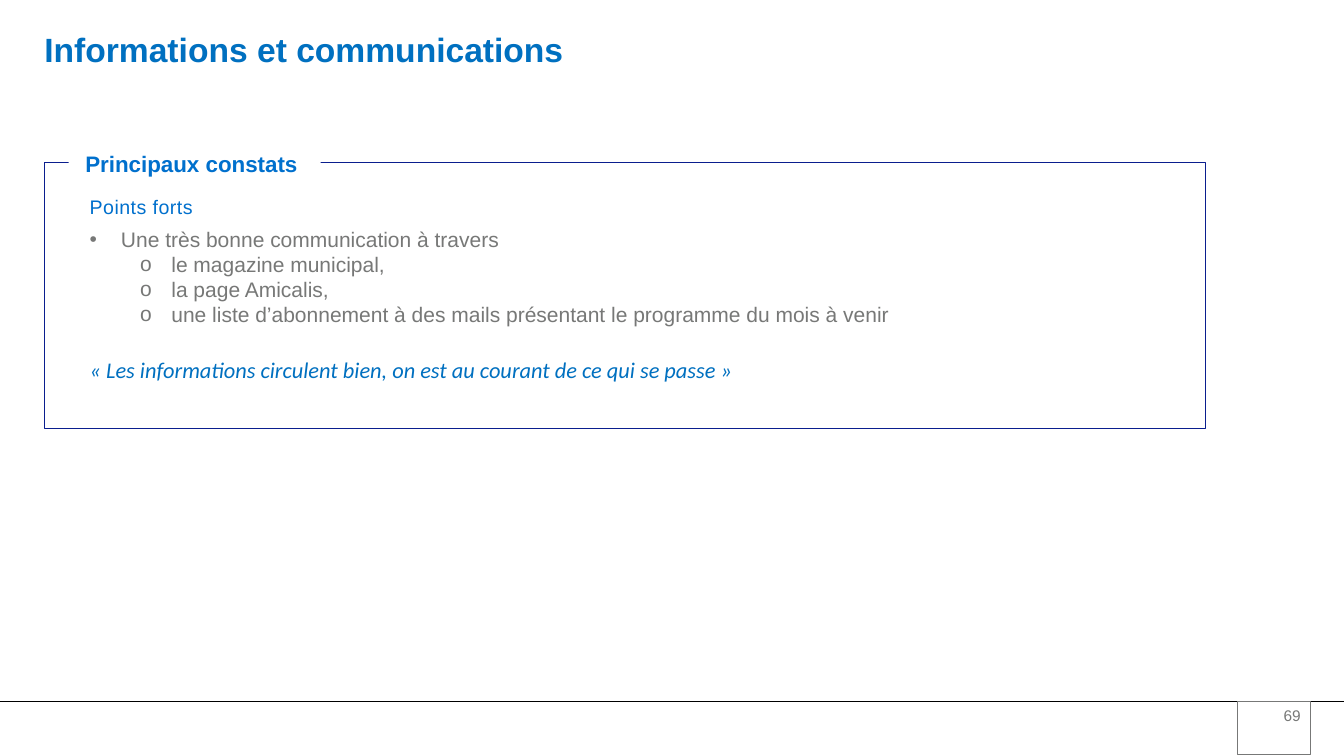
from dataclasses import dataclass
from typing import Optional

import pptx
import pptx.dml.color
import pptx.enum.shapes
import pptx.enum.text
import pptx.oxml.ns
import pptx.util
from lxml import etree

Inches = pptx.util.Inches
Pt = pptx.util.Pt
Align = pptx.enum.text.PP_ALIGN
Anchor = pptx.enum.text.MSO_ANCHOR
qn = pptx.oxml.ns.qn


@dataclass(frozen=True)
class Theme:
    font: str = "Arial"
    quote_font: str = "Calibri"
    blue: str = "0070C0"
    label_blue: str = "0070CD"
    navy: str = "0A1E8E"
    grey: str = "777877"
    white: str = "FFFFFF"
    black: str = "000000"
    title_size: float = 24
    label_size: float = 16
    heading_size: float = 14
    body_size: float = 15
    number_size: float = 11


THEME = Theme()


@dataclass(frozen=True)
class Box:
    left: float
    top: float
    width: float
    height: float
    fill: Optional[str] = None
    line: Optional[str] = None
    weight: float = 0.75


@dataclass(frozen=True)
class Line:
    text: str
    size: float = THEME.body_size
    color: str = THEME.grey
    font: str = THEME.font
    bold: bool = False
    italic: bool = False
    align: Align = Align.LEFT
    bullet: str = ""
    level: int = 0
    before: float = 0
    after: float = 0
    spacing: float = 1.0
    tracking: float = 0


def rgb(color: str) -> pptx.dml.color.RGBColor:
    return pptx.dml.color.RGBColor.from_string(color)


def add_bullet(paragraph, line: Line) -> None:
    props = paragraph._p.get_or_add_pPr()
    props.set("marL", str(Inches(0.31 + 0.5 * line.level)))
    props.set("indent", str(Inches(-0.31)))
    color = etree.SubElement(props, qn("a:buClr"))
    etree.SubElement(color, qn("a:srgbClr"), val=line.color)
    etree.SubElement(props, qn("a:buFont"), typeface=THEME.font)
    etree.SubElement(props, qn("a:buChar"), char=line.bullet)


def write(frame, lines: list[Line], left: float = 0.1, top: float = 0.05,
          anchor: Anchor = Anchor.TOP, wrap: bool = True) -> None:
    frame.word_wrap = wrap
    frame.vertical_anchor = anchor
    frame.margin_left, frame.margin_top = Inches(left), Inches(top)
    frame.margin_right, frame.margin_bottom = Inches(0.1), Inches(0.05)
    for index, line in enumerate(lines):
        paragraph = frame.add_paragraph() if index else frame.paragraphs[0]
        paragraph.level = line.level
        if line.bullet:
            add_bullet(paragraph, line)
        paragraph.alignment = line.align
        paragraph.line_spacing = line.spacing
        paragraph.space_before = Pt(line.before)
        paragraph.space_after = Pt(line.after)
        run = paragraph.add_run()
        run.text = line.text
        if line.tracking:
            run._r.get_or_add_rPr().set("spc", str(round(line.tracking * 100)))
        font = paragraph.font
        font.name, font.size = line.font, Pt(line.size)
        font.bold, font.italic = line.bold, line.italic
        font.color.rgb = rgb(line.color)


def place(box: Box) -> list[int]:
    return [Inches(n) for n in (box.left, box.top, box.width, box.height)]


def add_box(slide, box: Box):
    shape = slide.shapes.add_shape(
        pptx.enum.shapes.MSO_SHAPE.RECTANGLE, *place(box))
    shape.shadow.inherit = False
    if box.fill:
        shape.fill.solid()
        shape.fill.fore_color.rgb = rgb(box.fill)
    else:
        shape.fill.background()
    if box.line:
        shape.line.color.rgb = rgb(box.line)
        shape.line.width = Pt(box.weight)
    else:
        shape.line.fill.background()
    return shape.text_frame


def add_text(slide, box: Box):
    return slide.shapes.add_textbox(*place(box)).text_frame


def add_rule(slide, y: float, width: float) -> None:
    rule = slide.shapes.add_connector(
        pptx.enum.shapes.MSO_CONNECTOR.STRAIGHT,
        0, Inches(y), Inches(width), Inches(y))
    rule.line.color.rgb = rgb(THEME.black)
    rule.line.width = Pt(0.75)
    etree.SubElement(rule._element.spPr, qn("a:effectLst"))


TITLE = Line("Informations et communications", THEME.title_size, THEME.blue,
             bold=True, spacing=0.9)
LABEL = Line("Principaux constats ", THEME.label_size, THEME.label_blue,
             bold=True, align=Align.CENTER)
PAGE_NUMBER = Line("69", THEME.number_size, align=Align.RIGHT)
CHANNELS = [
    "le magazine municipal,",
    "la page Amicalis,",
    "une liste d’abonnement à des mails présentant le programme du mois à venir",
]
FINDINGS = [
    Line("Points forts", THEME.heading_size, THEME.label_blue,
         after=6, tracking=0.3),
    Line("Une très bonne communication à travers", bullet="•"),
    *[Line(channel, bullet="o", level=1) for channel in CHANNELS],
    Line("« Les informations circulent bien, on est au courant de ce qui se passe »",
         THEME.label_size, THEME.blue, THEME.quote_font, italic=True, before=20.7),
]


def main() -> None:
    deck = pptx.Presentation()
    deck.slide_width, deck.slide_height = Inches(13.33), Inches(7.5)
    slide = deck.slides.add_slide(deck.slide_layouts[6])
    add_rule(slide, 6.96, 13.33)
    write(add_text(slide, Box(0.44, 0.3, 12.67, 0.39)), [TITLE], left=0, top=0.03)
    add_box(slide, Box(0.44, 1.61, 11.51, 2.64, line=THEME.navy, weight=0.25))
    write(add_box(slide, Box(0.68, 1.55, 2.5, 0.15, fill=THEME.white)),
          [LABEL], anchor=Anchor.MIDDLE, wrap=False)
    write(add_text(slide, Box(0.89, 1.88, 11.4, 1.98)), FINDINGS, left=0)
    write(add_box(slide, Box(12.27, 6.96, 0.73, 0.53, line=THEME.grey)),
          [PAGE_NUMBER])
    deck.save("out.pptx")


if __name__ == "__main__":
    main()
